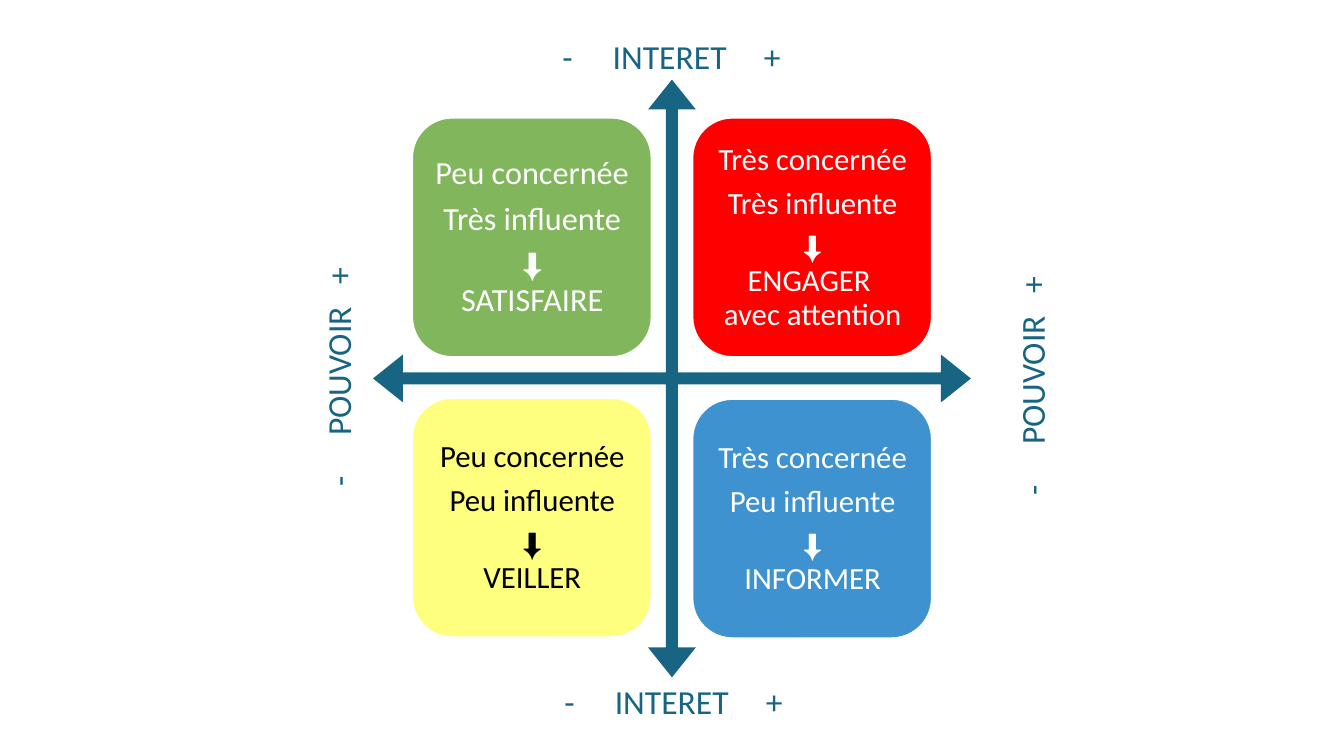
from dataclasses import dataclass

from lxml.etree import SubElement
from pptx import Presentation
from pptx.dml.color import RGBColor
from pptx.enum.shapes import MSO_SHAPE
from pptx.enum.text import MSO_ANCHOR, MSO_AUTO_SIZE, PP_ALIGN
from pptx.oxml.ns import qn
from pptx.util import Pt

EMU_PER_PX = 9144  # 100 px to the inch


@dataclass(frozen=True)
class Theme:
    font: str = "Calibri"
    teal: str = "186583"
    white: str = "FFFFFF"
    black: str = "000000"
    green: str = "70AD47"
    red: str = "FF0000"
    yellow: str = "FFFF00"
    blue: str = "0070C0"
    axis_size: int = 24
    large_size: int = 23
    card_size: int = 22


THEME = Theme()


@dataclass(frozen=True)
class Quadrant:
    left: int
    top: int
    fill: str
    opacity: int
    lines: tuple[str, ...]
    color: str = THEME.white
    size: int = THEME.card_size
    inset: int = 9


@dataclass(frozen=True)
class AxisLabel:
    left: int
    top: int
    width: int
    text: str
    rotation: int = 0


CARD_SIDE, TEXT_SIDE, TEXT_OFFSET = 237, 214, 12
LABEL_HEIGHT = 50

QUADRANTS = (
    Quadrant(409, 117, THEME.green, 88,
             ("Peu concernée", "Très influente", "⬇\nSATISFAIRE"),
             size=THEME.large_size, inset=10),
    Quadrant(687, 117, THEME.red, 100,
             ("Très concernée", "Très influente", "⬇\nENGAGER \navec attention")),
    Quadrant(409, 395, THEME.yellow, 50,
             ("Peu concernée", "Peu influente", "⬇\nVEILLER"),
             color=THEME.black),
    Quadrant(687, 396, THEME.blue, 76,
             ("Très concernée", "Peu influente", "⬇\nINFORMER")),
)

INTEREST, POWER = "-\tINTERET\t+", "-\tPOUVOIR\t+"
AXIS_LABELS = (
    AxisLabel(409, 671, 518, INTEREST),
    AxisLabel(79, 349, 512, POWER, 270),
    AxisLabel(767, 358, 512, POWER, 270),
    AxisLabel(407, 31, 518, INTEREST),
)


def px(value: int) -> int:
    return value * EMU_PER_PX


def add_filled(shapes, kind, left: int, top: int, side: int, fill: str,
               opacity: int = 100):
    sp = shapes.add_shape(kind, px(left), px(top), px(side), px(side))
    sp.shadow.inherit = False
    sp.fill.solid()
    sp.fill.fore_color.rgb = RGBColor.from_string(fill)
    sp.line.fill.background()
    if opacity < 100:
        color = sp.fill._xPr.find(qn("a:solidFill"))[0]
        SubElement(color, qn("a:alpha")).set("val", str(opacity * 1000))
    return sp


def add_text(shapes, left: int, top: int, width: int, height: int,
             lines: tuple[str, ...], *, size: int, color: str,
             inset: int | None = None, line_spacing: float | None = None,
             space_after: float = 0, anchor=MSO_ANCHOR.TOP, grow: bool = False):
    sp = shapes.add_textbox(px(left), px(top), px(width), px(height))
    tf = sp.text_frame
    tf.word_wrap = True
    tf.vertical_anchor = anchor
    tf.auto_size = MSO_AUTO_SIZE.SHAPE_TO_FIT_TEXT if grow else MSO_AUTO_SIZE.NONE
    if inset is not None:
        tf.margin_left = tf.margin_right = px(inset)
        tf.margin_top = tf.margin_bottom = px(inset)
    for i, line in enumerate(lines):
        p = tf.add_paragraph() if i else tf.paragraphs[0]
        p.text = line
        p.alignment = PP_ALIGN.CENTER
        p.space_after = Pt(space_after)
        if line_spacing:
            p.line_spacing = line_spacing
        for r in p.runs:
            r.font.name = THEME.font
            r.font.size = Pt(size)
            r.font.color.rgb = RGBColor.from_string(color)
    return sp


def add_quadrant(shapes, q: Quadrant) -> None:
    card = add_filled(shapes, MSO_SHAPE.ROUNDED_RECTANGLE, q.left, q.top,
                      CARD_SIDE, q.fill, q.opacity)
    card.line.color.rgb = RGBColor.from_string(THEME.white)
    card.line.width = Pt(1)
    add_text(shapes, q.left + TEXT_OFFSET, q.top + TEXT_OFFSET, TEXT_SIDE, TEXT_SIDE,
             q.lines, size=q.size, color=q.color, inset=q.inset, line_spacing=0.9,
             space_after=q.size * 0.35, anchor=MSO_ANCHOR.MIDDLE)


def add_axis_label(shapes, label: AxisLabel) -> None:
    sp = add_text(shapes, label.left, label.top, label.width, LABEL_HEIGHT,
                  (label.text,), size=THEME.axis_size, color=THEME.teal, grow=True)
    sp.rotation = label.rotation


def main() -> None:
    prs = Presentation()
    prs.slide_width, prs.slide_height = px(1333), px(750)
    s = prs.slides.add_slide(prs.slide_layouts[6])

    # Matrix: crossed axes and four quadrants
    matrix = s.shapes.add_group_shape().shapes
    axes = add_filled(matrix, MSO_SHAPE.QUAD_ARROW, 370, 79, 593, THEME.teal)
    for i, ratio in enumerate((0.02, 0.04, 0.05)):
        axes.adjustments[i] = ratio
    for quadrant in QUADRANTS:
        add_quadrant(matrix, quadrant)

    # Axis labels
    for label in AXIS_LABELS:
        add_axis_label(s.shapes, label)

    prs.save("out.pptx")


if __name__ == "__main__":
    main()
